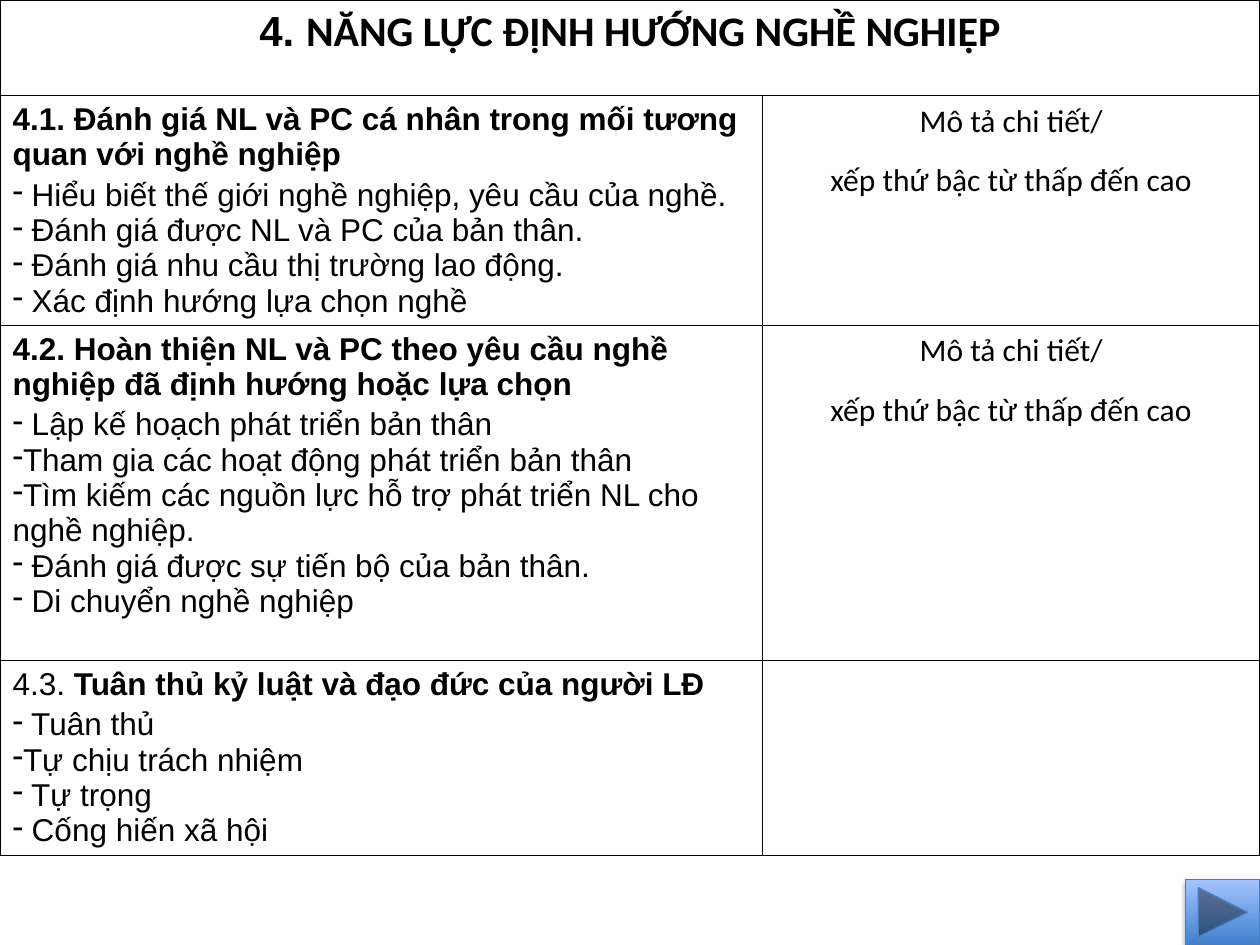
import pptx
import pptx.dml.color
import pptx.enum.shapes
import pptx.enum.text
import pptx.oxml
import pptx.oxml.ns
import pptx.util
from lxml import etree
from pptx.util import Inches

COLORS = {"ink": "000000", "paper": "FFFFFF", "button_dark": "3F80CE",
          "button_light": "A4C4FF", "button_line": "4B7EBC"}
CENTER = pptx.enum.text.PP_ALIGN.CENTER
FORMATS = {
    "title": {"alignment": CENTER, "space_after": pptx.util.Pt(6)},
    "heading": {"space_after": pptx.util.Pt(3)},
    "bullet": {},
    "note": {"alignment": CENTER, "space_after": pptx.util.Pt(6)},
}
TITLE = [("4. ", "Arial", True), ("NĂNG LỰC ĐỊNH HƯỚNG NGHỀ NGHIỆP", "Calibri", True)]
NOTES = ["Mô tả chi tiết/", "xếp thứ bậc từ thấp đến cao"]
SECTIONS = [
    ([("4.1. Đánh giá NL và PC cá nhân trong mối tương quan với nghề nghiệp", "Arial", True)],
     [" Hiểu biết thế giới nghề nghiệp, yêu cầu của nghề.",
      " Đánh giá được NL và PC của bản thân.",
      " Đánh giá nhu cầu thị trường lao động.",
      " Xác định hướng lựa chọn nghề"], NOTES),
    ([("4.2. Hoàn thiện NL và PC theo yêu cầu nghề nghiệp đã định hướng hoặc lựa chọn",
       "Arial", True)],
     [" Lập kế hoạch phát triển bản thân",
      "Tham gia các hoạt động phát triển bản thân",
      "Tìm kiếm các nguồn lực hỗ trợ phát triển NL cho nghề nghiệp.",
      " Đánh giá được sự tiến bộ của bản thân.",
      " Di chuyển nghề nghiệp"], NOTES),
    ([("4.3. ", "Arial", False), ("Tuân thủ kỷ luật và đạo đức của người LĐ", "Arial", True)],
     [" Tuân thủ", "Tự chịu trách nhiệm", " Tự trọng", " Cống hiến xã hội"], []),
]
COLUMN_WIDTHS = [6.05, 3.95]
ROW_HEIGHTS = [0.76, 1.82, 2.66, 1.55]


def rgb(name):
    return pptx.dml.color.RGBColor.from_string(COLORS[name])


def add_element(parent, tag, **attributes):
    return etree.SubElement(parent, pptx.oxml.ns.qn(tag), attributes)


def set_attributes(target, values):
    for name, value in values.items():
        setattr(target, name, value)


def format_cell(cell):
    properties = cell._tc.get_or_add_tcPr()
    for side in ("a:lnL", "a:lnR", "a:lnT", "a:lnB"):
        line = add_element(properties, side, w=str(pptx.util.Pt(1)))
        fill = add_element(line, "a:solidFill")
        add_element(fill, "a:srgbClr", val=COLORS["ink"])
    cell.fill.solid()
    cell.fill.fore_color.rgb = rgb("paper")


def write_cell(cell, paragraphs):
    frame = cell.text_frame
    for index, (kind, runs) in enumerate(paragraphs):
        paragraph = frame.add_paragraph() if index else frame.paragraphs[0]
        set_attributes(paragraph, FORMATS[kind])
        if index and kind == "note":
            paragraph.space_before = pptx.util.Pt(6)
        if kind == "bullet":
            add_element(paragraph._p.get_or_add_pPr(), "a:buChar", char="-")
        for text, font_name, bold in runs:
            run = paragraph.add_run()
            run.text = text
            size = pptx.util.Pt(24 if kind == "title" else 18)
            set_attributes(run.font, {"name": font_name, "size": size, "bold": bold})
            run.font.color.rgb = rgb("ink")


def add_competence_table(slide, left, top, width, height):
    table = slide.shapes.add_table(len(ROW_HEIGHTS), len(COLUMN_WIDTHS),
                                   left, top, width, height).table
    set_attributes(table, {"first_row": False, "horz_banding": False})
    for column, size in zip(table.columns, COLUMN_WIDTHS):
        column.width = Inches(size)
    for row, size in zip(table.rows, ROW_HEIGHTS):
        row.height = Inches(size)
    for cell in table.iter_cells():
        format_cell(cell)
    table.cell(0, 0).merge(table.cell(0, 1))
    write_cell(table.cell(0, 0), [("title", TITLE)])
    for row, (heading, bullets, notes) in enumerate(SECTIONS, start=1):
        items = [("bullet", [(text, "Arial", False)]) for text in bullets]
        write_cell(table.cell(row, 0), [("heading", heading)] + items)
        write_cell(table.cell(row, 1),
                   [("note", [(text, "Calibri", False)]) for text in notes])


def add_next_button(slide, left, top, width, height):
    button = slide.shapes.add_shape(
        pptx.enum.shapes.MSO_SHAPE.ACTION_BUTTON_FORWARD_OR_NEXT, left, top, width, height)
    button.fill.gradient()
    button.fill.gradient_angle = 90
    for stop, name in zip(button.fill.gradient_stops, ("button_dark", "button_light")):
        stop.color.rgb = rgb(name)
    button.line.color.rgb = rgb("button_line")
    button.line.width = pptx.util.Pt(0.75)
    button.shadow.inherit = False
    effects = button._element.spPr.find(pptx.oxml.ns.qn("a:effectLst"))
    shadow = add_element(effects, "a:outerShdw", blurRad=str(pptx.util.Pt(3.1)),
                         dist=str(pptx.util.Pt(1.8)), dir="5400000", rotWithShape="0")
    color = add_element(shadow, "a:srgbClr", val=COLORS["ink"])
    add_element(color, "a:alpha", val="35000")


def main():
    presentation = pptx.Presentation()
    presentation.slide_width = Inches(10)
    presentation.slide_height = Inches(7.5)
    slide = presentation.slides.add_slide(presentation.slide_layouts[6])
    add_competence_table(slide, Inches(0), Inches(0), Inches(10), Inches(sum(ROW_HEIGHTS)))
    add_next_button(slide, Inches(9.41), Inches(6.98), Inches(0.59), Inches(0.52))
    presentation.save("out.pptx")


if __name__ == "__main__":
    main()
